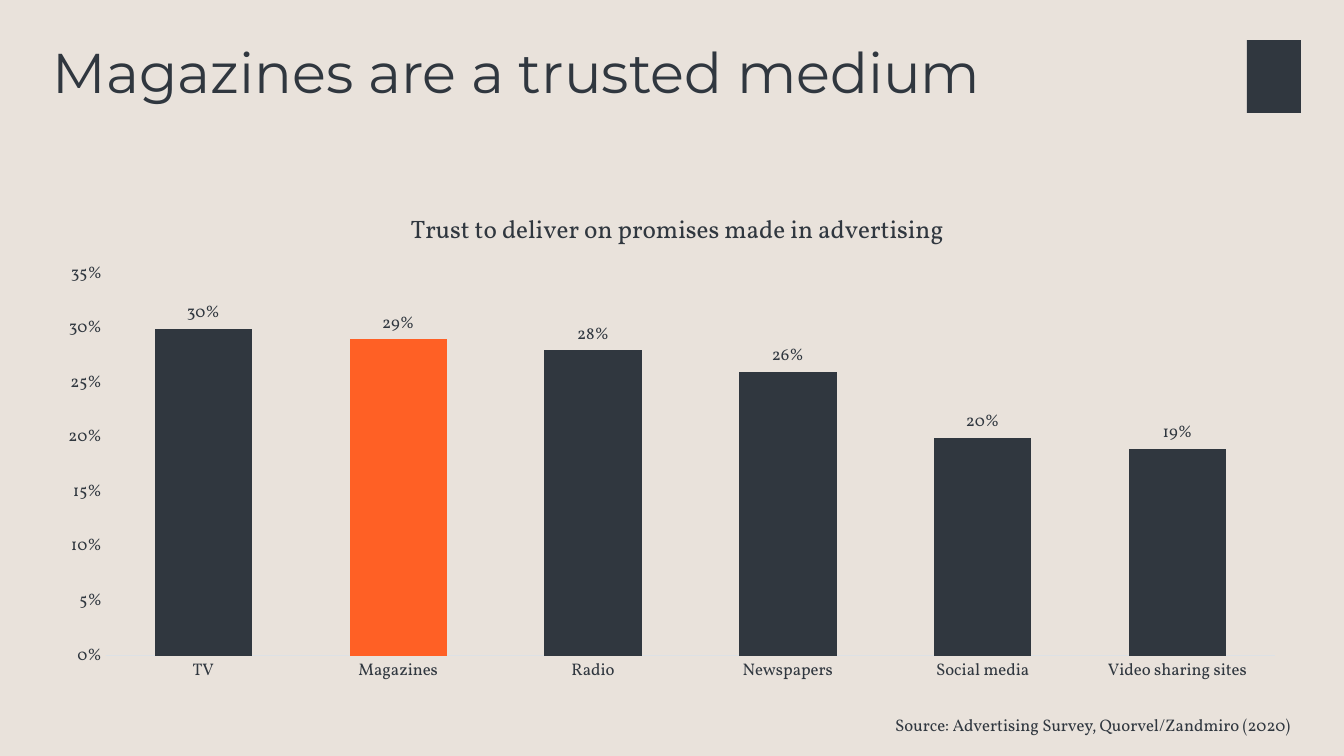
from lxml.etree import SubElement
from pptx import Presentation
from pptx.chart.data import CategoryChartData
from pptx.dml.color import RGBColor
from pptx.enum.chart import XL_CHART_TYPE, XL_LABEL_POSITION, XL_TICK_MARK
from pptx.enum.shapes import MSO_SHAPE
from pptx.enum.text import MSO_ANCHOR, PP_ALIGN
from pptx.oxml.ns import qn
from pptx.util import Pt

# Content
HEADLINE = "Magazines are a trusted medium"
CHART_TITLE = "Trust to deliver on promises made in advertising"
SOURCE = "Source: Advertising Survey, Quorvel/Zandmiro (2020)"
TRUST = {
    "TV": 0.30,
    "Magazines": 0.29,
    "Radio": 0.28,
    "Newspapers": 0.26,
    "Social media": 0.20,
    "Video sharing sites": 0.19,
}
HIGHLIGHT = "Magazines"

INK, ORANGE, SAND, AXIS_GREY = "30373F", "FF6025", "E9E2DB", "DDE1E5"
SANS, SERIF = "Montserrat", "Vollkorn"

# Places in px: left, top, width, height
SLIDE = (1344, 756)
HEADLINE_BOX = (43, 40, 1121, 146)
EMBLEM_BOX = (1247, 40, 54, 73)
CHART_BOX = (43, 186, 1258, 507)
CHART_TITLE_BOX = (406, 207, 532, 35)
PLOT_BOX = (106, 274, 1169, 382)
SOURCE_BOX = (767, 706, 534, 41)


def px(length):
    return round(length * 914400 / 100.8)


def place(box):
    return [px(length) for length in box]


def color(code):
    return RGBColor.from_string(code)


def paint(target, code):
    target.fill.solid()
    target.fill.fore_color.rgb = color(code)


def style(font, size, name=SERIF):
    font.size = Pt(size)
    font.name = name
    font.bold = False
    font.color.rgb = color(INK)


def add_text(box, text, size, name):
    frame = slide.shapes.add_textbox(*place(box)).text_frame
    frame.word_wrap = True
    paragraph = frame.paragraphs[0]
    paragraph.text = text
    paragraph.line_spacing = 0.9
    style(paragraph.font, size, name)
    return frame


def set_layout(parent, index, box, inner=False):
    """Fix a chart part at a box, as fractions of the chart."""
    for old in parent.findall(qn("c:layout")):
        parent.remove(old)
    layout = SubElement(parent, qn("c:layout"))
    parent.insert(index, layout)
    manual = SubElement(layout, qn("c:manualLayout"))
    left, top, width, height = CHART_BOX
    settings = {"layoutTarget": "inner"} if inner else {}
    settings |= {"xMode": "edge", "yMode": "edge",
                 "x": (box[0] - left) / width, "y": (box[1] - top) / height}
    if inner:
        settings |= {"w": box[2] / width, "h": box[3] / height}
    for tag, value in settings.items():
        SubElement(manual, qn(f"c:{tag}")).set("val", str(value))


deck = Presentation()
deck.slide_width, deck.slide_height = place(SLIDE)
slide = deck.slides.add_slide(deck.slide_layouts[6])
paint(slide.background, SAND)

# Plain block in the emblem's place
emblem = slide.shapes.add_shape(MSO_SHAPE.RECTANGLE, *place(EMBLEM_BOX))
emblem.shadow.inherit = False
paint(emblem, INK)
emblem.line.fill.background()

# Trust chart
trust_data = CategoryChartData(number_format="0%")
trust_data.categories = list(TRUST)
trust_data.add_series("Series 1", list(TRUST.values()))
chart = slide.shapes.add_chart(
    XL_CHART_TYPE.COLUMN_CLUSTERED, *place(CHART_BOX), trust_data).chart
style(chart.font, 10)
chart.has_legend = False
chart.has_title = True
chart_heading = chart.chart_title.text_frame.paragraphs[0]
chart_heading.text = CHART_TITLE
style(chart_heading.font, 18)
style(chart_heading.runs[0].font, 18)
set_layout(chart.chart_title._element, 1, CHART_TITLE_BOX)
set_layout(chart._chartSpace.chart.plotArea, 0, PLOT_BOX, inner=True)

# Axes
for axis in (chart.category_axis, chart.value_axis):
    axis.major_tick_mark = axis.minor_tick_mark = XL_TICK_MARK.NONE
    axis.has_major_gridlines = False
    style(axis.tick_labels.font, 12)
chart.category_axis.format.line.color.rgb = color(AXIS_GREY)
chart.category_axis.format.line.width = Pt(0.75)
percent_axis = chart.value_axis
percent_axis.format.line.fill.background()
percent_axis.minimum_scale, percent_axis.maximum_scale = 0, 0.35
percent_axis.major_unit = 0.05
percent_axis.tick_labels.number_format = "0%"
percent_axis.tick_labels.number_format_is_linked = False

# Columns and their labels
columns = chart.plots[0]
columns.gap_width = 100
columns.vary_by_categories = False
trust = columns.series[0]
paint(trust.format, INK)
paint(trust.points[list(TRUST).index(HIGHLIGHT)].format, ORANGE)
labels = trust.data_labels
labels.show_value = True
labels.position = XL_LABEL_POSITION.OUTSIDE_END
labels.number_format = "0%"
labels.number_format_is_linked = False
style(labels.font, 12)

# Headline and source
add_text(HEADLINE_BOX, HEADLINE, 40, SANS)
source = add_text(SOURCE_BOX, SOURCE, 12, SERIF)
source.vertical_anchor = MSO_ANCHOR.MIDDLE
source.paragraphs[0].alignment = PP_ALIGN.RIGHT

deck.save("out.pptx")
